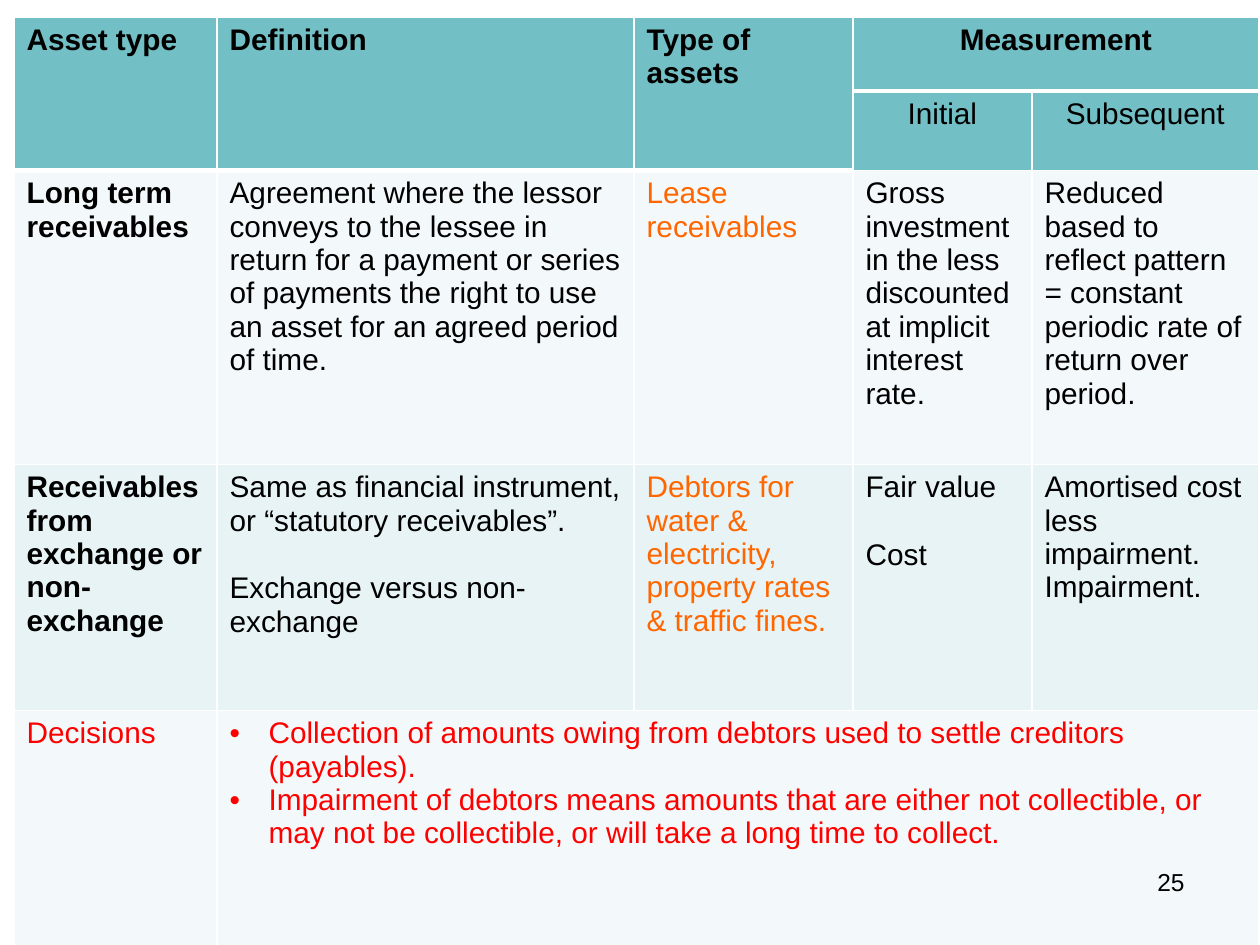
from lxml.etree import SubElement
from pptx import Presentation
from pptx.dml.color import RGBColor
from pptx.enum.text import PP_ALIGN as Align
from pptx.oxml import parse_xml
from pptx.oxml.ns import nsdecls, qn
from pptx.util import Emu, Pt

SCALE = 914400 // 126
BLACK, WHITE, ORANGE, RED = "000000", "FFFFFF", "FF6600", "FF0000"
HEADER, PALE, TINT = "72BFC5", "F3F9FA", "E7F3F4"
COLUMNS = [203, 417, 219, 179, 227]
ROWS = [74, 63, 294, 246, 246]
FILLS = [HEADER, HEADER, PALE, TINT, PALE]
MERGES = [(0, 0, 1, 0), (0, 1, 1, 1), (0, 2, 1, 2), (0, 3, 0, 4), (4, 1, 4, 4)]
BOLD = {"bold": True}
CENTER = {"align": Align.CENTER}
GAP = {"gap": 19.5}
CONTENT = {
    (0, 0): (["Asset type"], BOLD),
    (0, 1): (["Definition"], BOLD),
    (0, 2): (["Type of assets"], BOLD),
    (0, 3): (["Measurement"], BOLD | CENTER),
    (1, 3): (["Initial"], CENTER),
    (1, 4): (["Subsequent"], CENTER),
    (2, 0): (["Long term receivables"], BOLD),
    (2, 1): (["Agreement where the lessor conveys to the lessee in return for a "
              "payment or series of payments the right to use an asset for an "
              "agreed period of time."], {}),
    (2, 2): (["Lease receivables"], {"color": ORANGE}),
    (2, 3): (["Gross investment in the less discounted at implicit interest rate."], {}),
    (2, 4): (["Reduced based to reflect pattern = constant periodic rate of return "
              "over period."], {}),
    (3, 0): (["Receivables from exchange or non-exchange"], BOLD),
    (3, 1): (["Same as financial instrument, or “statutory receivables”.",
              "Exchange versus non-exchange"], GAP),
    (3, 2): (["Debtors for water & electricity, property rates & traffic fines."],
             {"color": ORANGE}),
    (3, 3): (["Fair value", "Cost"], GAP),
    (3, 4): (["Amortised cost less impairment.", "Impairment."], {}),
    (4, 0): (["Decisions"], {"color": RED}),
    (4, 1): (["Collection of amounts owing from debtors used to settle creditors "
              "(payables).",
              "Impairment of debtors means amounts that are either not collectible, "
              "or may not be collectible, or will take a long time to collect."],
             {"color": RED, "bullet": True}),
}


def px(length):
    return Emu(length * SCALE)


def paint(color_format, value):
    color_format.rgb = RGBColor.from_string(value)


def apply(target, values):
    for name, value in values.items():
        setattr(target, name, value)


def add_bullet(para):
    props = para._p.get_or_add_pPr()
    props.set("marL", str(px(39)))
    props.set("indent", str(px(-39)))
    SubElement(props, qn("a:buFont")).set("typeface", "Arial")
    SubElement(props, qn("a:buChar")).set("char", "•")


def write(frame, lines, size=17, color=BLACK, bold=False, align=Align.LEFT,
          gap=0, bullet=False):
    frame.word_wrap = True
    for index, line in enumerate(lines):
        para = frame.add_paragraph() if index else frame.paragraphs[0]
        para.alignment = align
        if index and gap:
            para.space_before = Pt(gap)
        if bullet:
            add_bullet(para)
        span = para.add_run()
        span.text = line
        apply(span.font, {"name": "Arial", "size": Pt(size), "bold": bold})
        paint(span.font.color, color)


def rule_below(row, column):
    return 3 if row == 0 or (row == 1 and column < 3) else 1


def add_borders(cell, row, column):
    above = rule_below(row - 1, column) if row else 1
    widths = {"lnL": 1, "lnR": 1, "lnT": above, "lnB": rule_below(row, column)}
    props = cell._tc.get_or_add_tcPr()
    for index, (side, width) in enumerate(widths.items()):
        props.insert(index, parse_xml(
            f'<a:{side} {nsdecls("a")} w="{Pt(width)}"><a:solidFill>'
            f'<a:srgbClr val="{WHITE}"/></a:solidFill></a:{side}>'))


def add_asset_table(page):
    frame = page.shapes.add_table(len(ROWS), len(COLUMNS), px(14), px(17),
                                  px(sum(COLUMNS)), px(sum(ROWS)))
    table = frame.table
    apply(table, {"first_row": False, "horz_banding": False})
    for column, width in zip(table.columns, COLUMNS):
        column.width = px(width)
    for row, height in zip(table.rows, ROWS):
        row.height = px(height)
    for row, fill in enumerate(FILLS):
        for column in range(len(COLUMNS)):
            cell = table.cell(row, column)
            cell.fill.solid()
            paint(cell.fill.fore_color, fill)
            add_borders(cell, row, column)
    for top, left, bottom, right in MERGES:
        table.cell(top, left).merge(table.cell(bottom, right))
    for position, (lines, style) in CONTENT.items():
        write(table.cell(*position).text_frame, lines, **style)


def add_page_number(page):
    box = page.shapes.add_textbox(px(903), px(861), px(294), px(66))
    write(box.text_frame, ["25"], size=14, align=Align.RIGHT)


def main():
    deck = Presentation()
    apply(deck, {"slide_width": px(1260), "slide_height": px(945)})
    page = deck.slides.add_slide(deck.slide_layouts[6])
    page.background.fill.solid()
    paint(page.background.fill.fore_color, WHITE)
    add_asset_table(page)
    add_page_number(page)
    deck.save("out.pptx")


if __name__ == "__main__":
    main()
